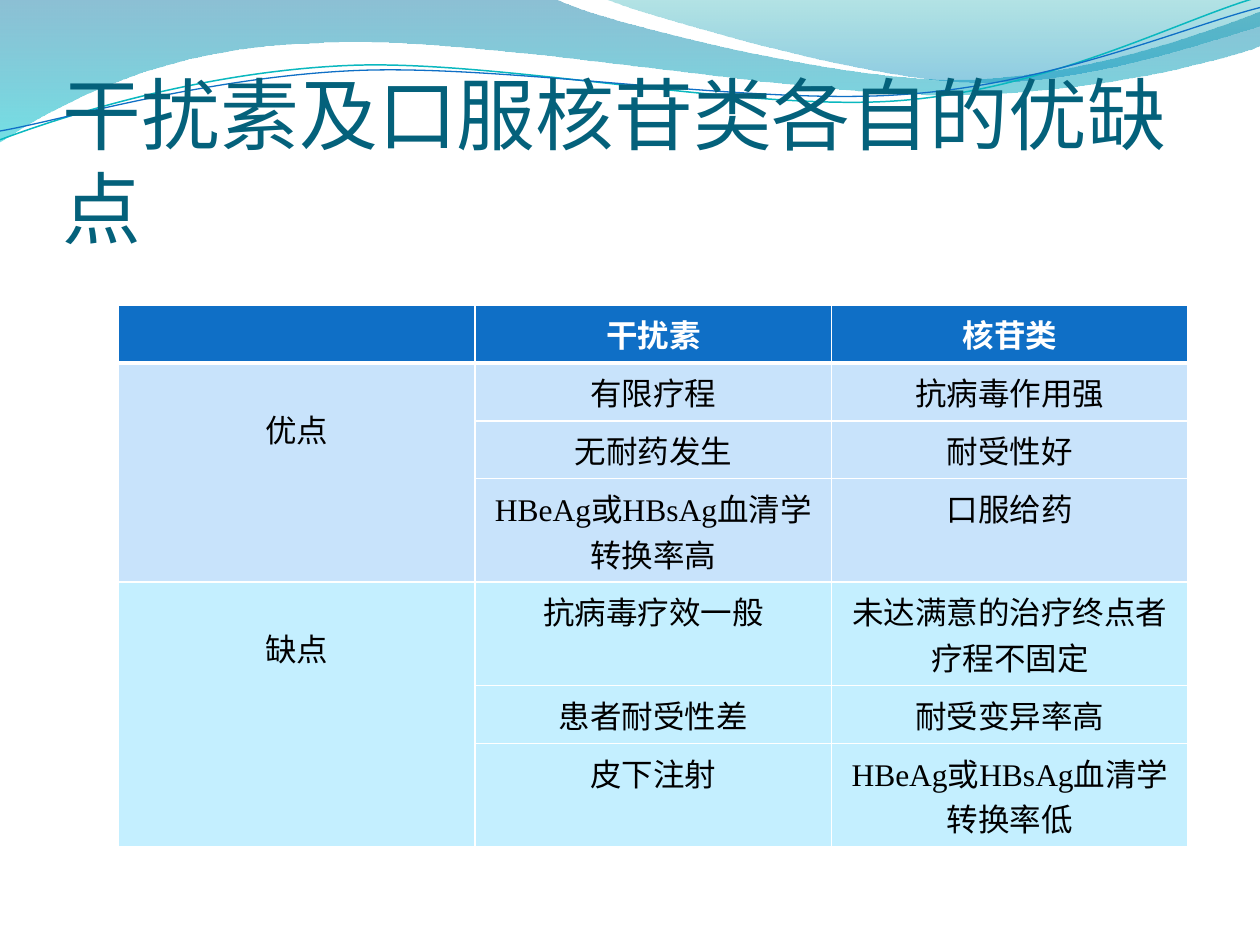
import pptx
import pptx.util
import pptx.dml.color
import pptx.enum.text
import pptx.oxml.ns
import lxml.etree

Inches, Pt = pptx.util.Inches, pptx.util.Pt
qn = pptx.oxml.ns.qn
CENTER = pptx.enum.text.PP_ALIGN.CENTER


def color(code):
    return pptx.dml.color.RGBColor.from_string(code)


def draw(start, steps, closed):
    """Outline from steps in inches: two numbers make a line, six a curve."""
    points = [(Inches(x), Inches(y)) for step in steps
              for x, y in zip(step[::2], step[1::2])]
    pen = slide.shapes.build_freeform(Inches(start[0]), Inches(start[1]))
    pen.add_line_segments(points, close=closed)
    shape = pen.convert_to_shape()
    shape.shadow.inherit = False
    lines = list(shape._element.iter(qn("a:lnTo")))
    for step in steps:
        count = len(step) // 2
        group, lines = lines[:count], lines[count:]
        if count == 3:
            group[0].tag = qn("a:cubicBezTo")
            for line in group[1:]:
                group[0].append(line[0])
                line.getparent().remove(line)
    return shape


deck = pptx.Presentation()
deck.slide_width, deck.slide_height = Inches(10), Inches(7.5)
slide = deck.slides.add_slide(deck.slide_layouts[6])

# Waves: start, steps, gradient stops as color and opacity
waves = [
    ((0, 0),
     [(4.4, -0.01), (4.76, 0.17, 6.64, 0.63, 7.58, 0.63),
      (8.53, 0.63, 9.58, 0.26, 10, 0.09), (10.01, 0.36),
      (9.83, 0.44, 8.7, 0.76, 7.46, 0.75),
      (6.22, 0.75, 3.82, 0.28, 2.57, 0.34),
      (1.29, 0.36, 0.46, 0.83, -0.01, 1.13)],
     [("0074A1", 45), ("00C6CF", 55)]),
    ((4.79, -0.01),
     [(5.09, 0.11, 6.82, 0.62, 7.69, 0.65),
      (8.56, 0.69, 9.61, 0.32, 10, 0.21), (10, 0)],
     [("00A1A9", 30), ("008BBF", 45)]),
]
for start, steps, stops in waves:
    wave = draw(start, steps, True)
    wave.line.fill.background()
    wave.fill.gradient()
    wave.fill.gradient_angle = 270
    for stop, (code, alpha) in zip(wave.fill.gradient_stops, stops):
        stop.color.rgb = color(code)
    tints = wave._element.spPr.iter(qn("a:srgbClr"))
    for tint, (code, alpha) in zip(tints, stops):
        lxml.etree.SubElement(tint, qn("a:alpha"), val=str(alpha * 1000))

# Thin curves over the waves
curves = [
    ((0, 1.11),
     [(0.48, 0.93, 1.58, 0.57, 2.77, 0.52),
      (3.95, 0.47, 5.93, 0.89, 7.13, 0.8),
      (8.33, 0.71, 9.38, 0.15, 9.98, -0.02)], "0AB8BF", 0.85),
    ((0, 1.04),
     [(0.47, 0.96, 1.64, 0.61, 2.83, 0.56),
      (4.03, 0.51, 5.97, 0.84, 7.17, 0.75),
      (8.36, 0.67, 9.41, 0.21, 10, 0.06)], "0F6FC6", 0.75),
]
for start, steps, code, width in curves:
    curve = draw(start, steps, False)
    curve.fill.background()
    curve.line.color.rgb = color(code)
    curve.line.width = Pt(width)

# Title
title = slide.shapes.add_textbox(Inches(0.5), Inches(0.77), Inches(9), Inches(1.25))
frame = title.text_frame
frame.word_wrap = True
frame.vertical_anchor = pptx.enum.text.MSO_ANCHOR.BOTTOM
frame.margin_left = frame.margin_right = frame.margin_bottom = 0
frame.margin_top = Inches(0.05)
frame.text = "干扰素及口服核苷类各自的优缺点"
font = frame.paragraphs[0].runs[0].font
font.name, font.size, font.color.rgb = "Calibri", Pt(45), color("04617B")

# Table
rows = [
    ("", "干扰素", "核苷类"),
    ("优点", "有限疗程", "抗病毒作用强"),
    ("", "无耐药发生", "耐受性好"),
    ("", "HBeAg或HBsAg血清学转换率高", "口服给药"),
    ("缺点", "抗病毒疗效一般", "未达满意的治疗终点者疗程不固定"),
    ("", "患者耐受性差", "耐受变异率高"),
    ("", "皮下注射", "HBeAg或HBsAg血清学转换率低"),
]
fills = ["0F6FC6"] + ["C8E3FB"] * 3 + ["C4EFFF"] * 3
heights = [0.46, 0.46, 0.46, 0.82, 0.82, 0.46, 0.82]
table = slide.shapes.add_table(len(rows), 3, Inches(0.94), Inches(2.42),
                               Inches(8.49), Inches(sum(heights))).table
table.horz_banding = False
for top in (1, 4):
    table.cell(top, 0).merge(table.cell(top + 2, 0))
    table.cell(top, 0).margin_top = Inches(0.34)

for r, row in enumerate(rows):
    table.rows[r].height = Inches(heights[r])
    for c, text in enumerate(row):
        cell = table.cell(r, c)
        cell.fill.solid()
        cell.fill.fore_color.rgb = color(fills[r])

        # White borders, thick under the header
        for i, side in enumerate("LRTB"):
            thick = (r, side) in ((0, "B"), (1, "T"))
            edge = lxml.etree.Element(qn("a:ln" + side), w=str(Pt(3 if thick else 1)))
            paint = lxml.etree.SubElement(edge, qn("a:solidFill"))
            lxml.etree.SubElement(paint, qn("a:srgbClr"), val="FFFFFF")
            cell._tc.get_or_add_tcPr().insert(i, edge)

        if not text:
            continue
        cell.text_frame.text = text
        para = cell.text_frame.paragraphs[0]
        para.alignment = CENTER
        font = para.runs[0].font
        font.name = "Cambria" if r == 0 or c == 0 else "Times New Roman"
        font.size, font.bold = Pt(18), r == 0
        font.color.rgb = color("FFFFFF" if r == 0 else "000000")

deck.save("out.pptx")
